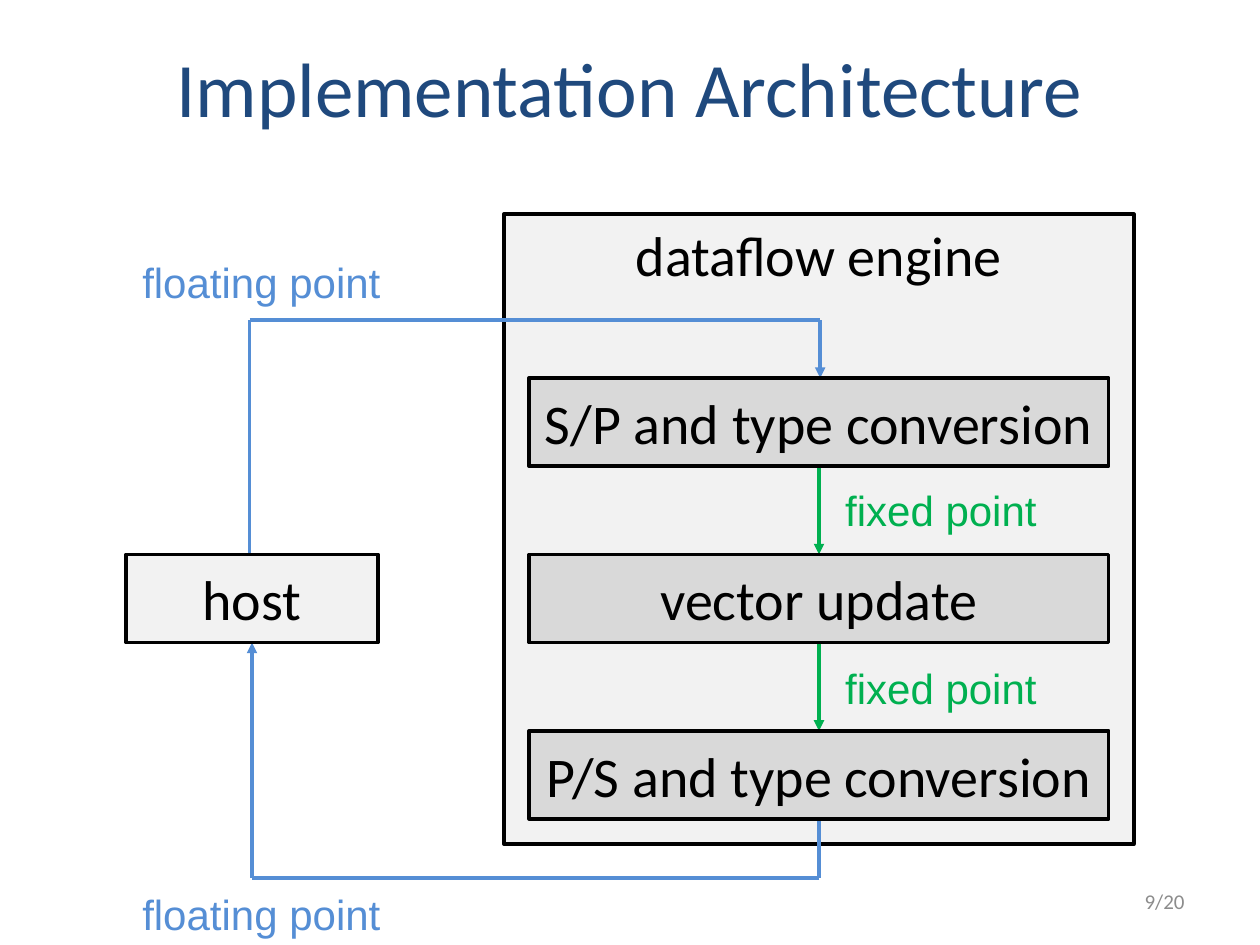
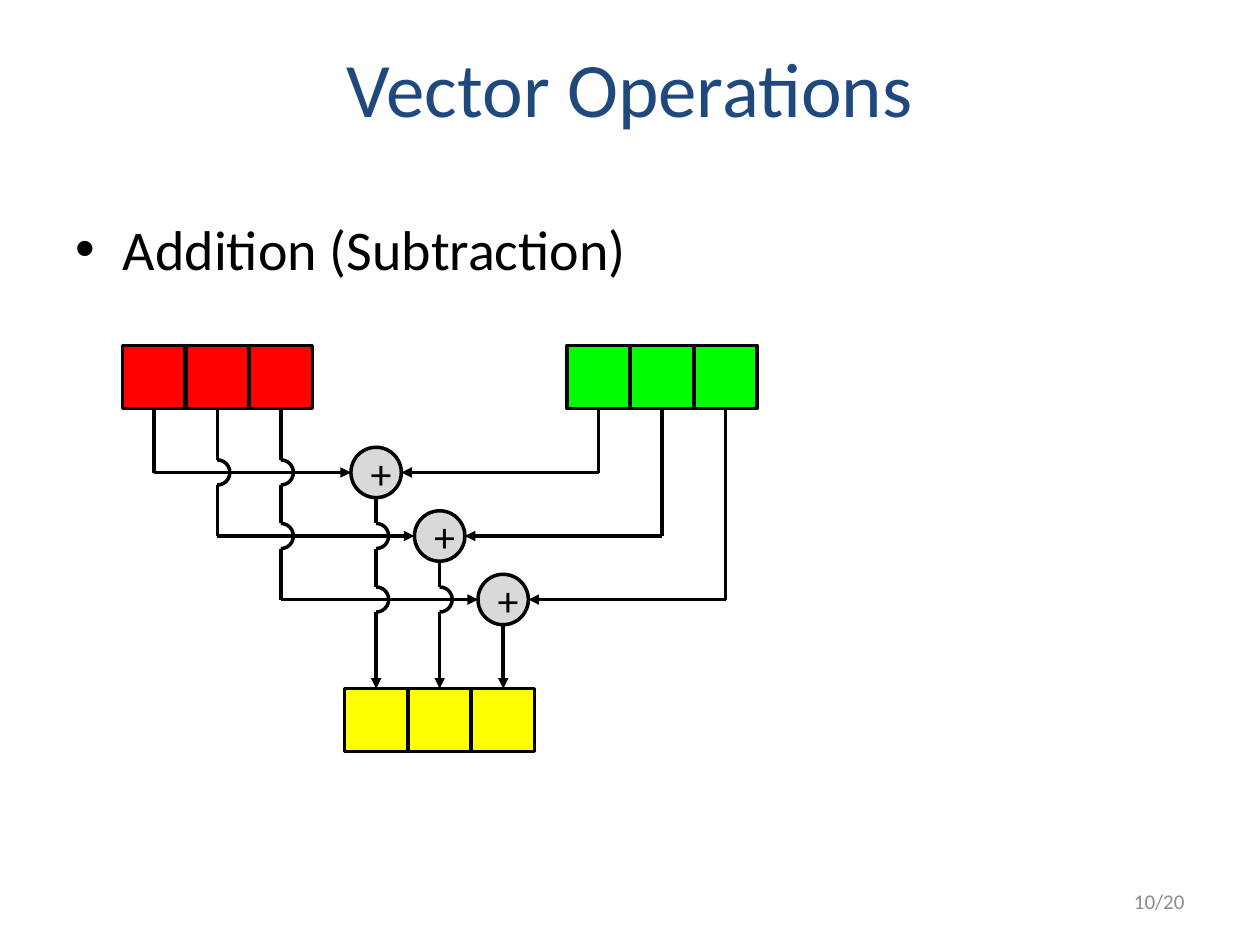
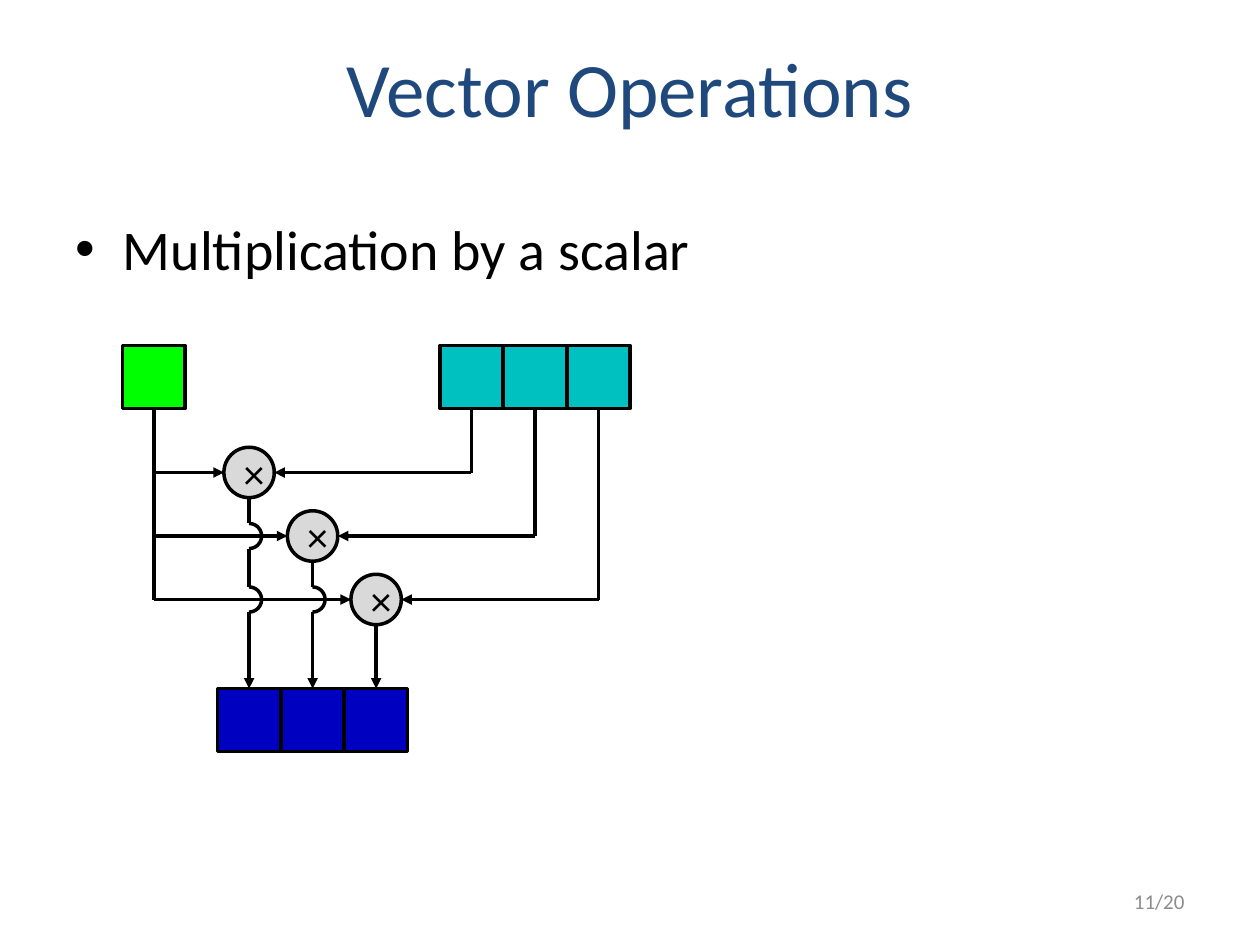
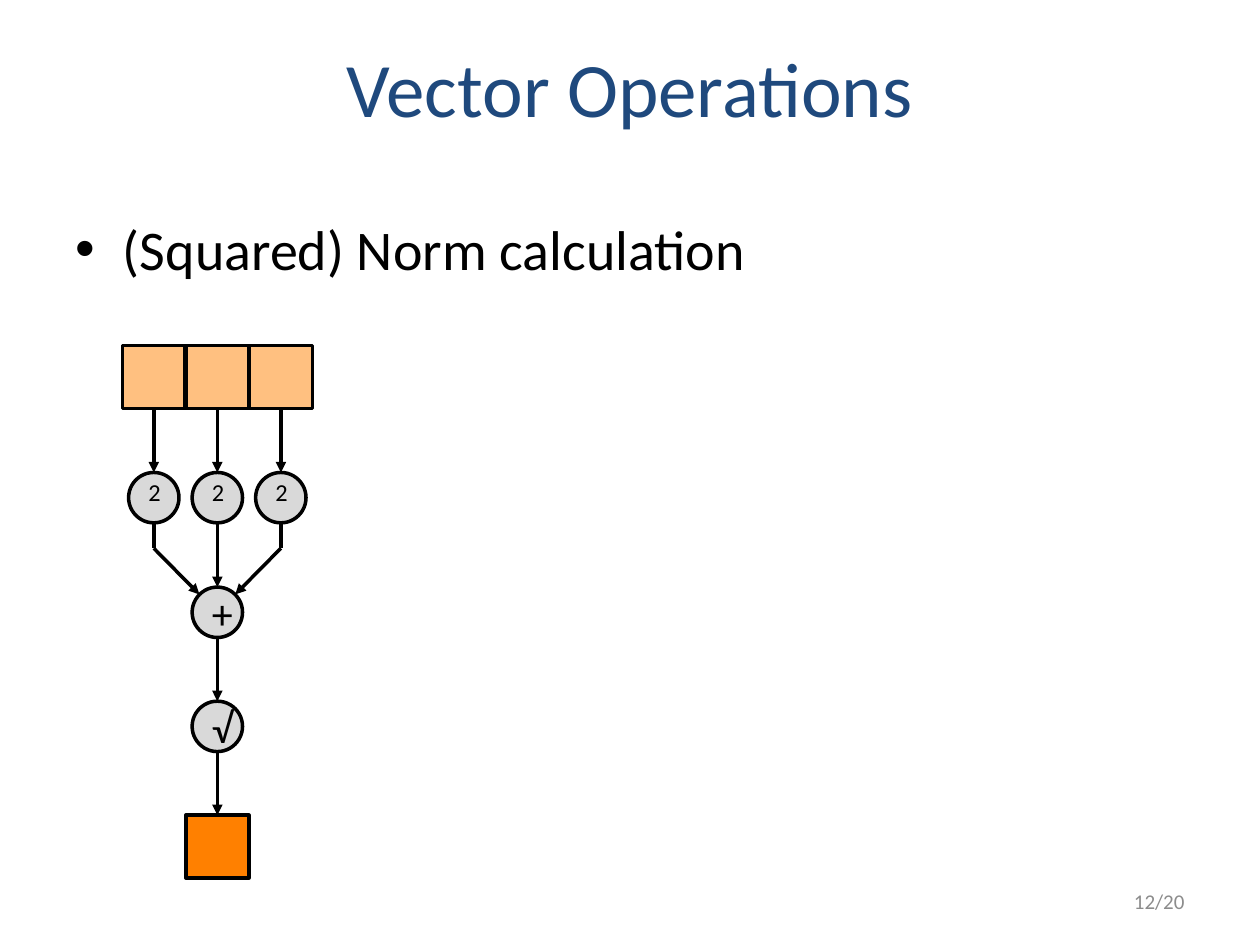
from dataclasses import dataclass
from typing import Optional

from lxml import etree
from pptx import Presentation
from pptx import util as u
from pptx.dml import color as c
from pptx.enum import shapes, text
from pptx.oxml import ns


# Theme: colours, fonts and type sizes
@dataclass(frozen=True)
class Theme:
    title: str = "1F497D"
    ink: str = "000000"
    number: str = "8C8C8C"
    panel: str = "F2F2F2"
    block: str = "D9D9D9"
    floating: str = "558ED5"
    fixed: str = "00B050"
    font: str = "Calibri"
    label_font: str = "Arial"
    title_size: int = 44
    body_size: int = 32
    label_size: int = 24
    number_size: int = 12
    line_width: int = 2


THEME = Theme()
LAST_NUMBER = 20


# Described elements, in points
@dataclass(frozen=True)
class Box:
    left: float
    top: float
    width: float
    height: float


@dataclass(frozen=True)
class Block:
    text: str
    box: Box
    fill: str
    anchor: text.MSO_ANCHOR = text.MSO_ANCHOR.MIDDLE


@dataclass(frozen=True)
class Label:
    text: str
    box: Box
    color: str
    align: text.PP_ALIGN
    wrap: bool


@dataclass(frozen=True)
class Vector:
    column: float
    color: str
    count: int = 3


@dataclass(frozen=True)
class LaneDiagram:
    """Two inputs joined lane by lane into a result below."""
    symbol: str
    first: Vector
    second: Vector
    result: Vector


Point = tuple[float, float]

TITLE_BOX = Box(36, 21.6, 648, 56.2)
LIST_BOX = Box(36, 118.8, 648, 46.1)
NUMBER_BOX = Box(516.2, 500.4, 167.8, 28.8)

# Grid of the vector diagrams
STEP = 36.3
CELL = 36
NODE_RADIUS = 14.4
HOP_RADIUS = 7.2
CELLS_TOP = 197.5
CELLS_BOTTOM = CELLS_TOP + CELL
RESULT_TOP = 393.5
LEVELS = [270 + STEP * lane for lane in range(3)]


def column_x(column: float) -> float:
    return 87.9 + STEP * column


# Drawing helpers
def rgb(value: str) -> c.RGBColor:
    return c.RGBColor.from_string(value)


def place(shape, box: Box) -> None:
    shape.left, shape.top = u.Pt(box.left), u.Pt(box.top)
    shape.width, shape.height = u.Pt(box.width), u.Pt(box.height)


def write(shape, words: str, size: int, color: str = THEME.ink, font: str = THEME.font,
          align: Optional[text.PP_ALIGN] = text.PP_ALIGN.CENTER,
          anchor: Optional[text.MSO_ANCHOR] = text.MSO_ANCHOR.MIDDLE) -> None:
    frame = shape.text_frame
    frame.text = words
    frame.vertical_anchor = anchor
    para = frame.paragraphs[0]
    para.alignment = align
    para.font.name = font
    para.font.size = u.Pt(size)
    para.font.color.rgb = rgb(color)


def add_text_box(page, box: Box):
    return page.shapes.add_textbox(u.Pt(box.left), u.Pt(box.top), u.Pt(box.width), u.Pt(box.height))


def add_outlined(page, kind: shapes.MSO_SHAPE, box: Box, fill: Optional[str]):
    shape = page.shapes.add_shape(kind, u.Pt(box.left), u.Pt(box.top),
                                  u.Pt(box.width), u.Pt(box.height))
    shape.shadow.inherit = False
    if fill:
        shape.fill.solid()
        shape.fill.fore_color.rgb = rgb(fill)
    else:
        shape.fill.background()
    shape.line.color.rgb = rgb(THEME.ink)
    shape.line.width = u.Pt(THEME.line_width)
    return shape


def add_block(page, block: Block) -> None:
    shape = add_outlined(page, shapes.MSO_SHAPE.RECTANGLE, block.box, block.fill)
    write(shape, block.text, THEME.body_size, anchor=block.anchor)


def add_label(page, label: Label) -> None:
    shape = add_text_box(page, label.box)
    write(shape, label.text, THEME.label_size, label.color, THEME.label_font,
          label.align, text.MSO_ANCHOR.TOP)
    shape.text_frame.word_wrap = label.wrap
    shape.text_frame.auto_size = text.MSO_AUTO_SIZE.SHAPE_TO_FIT_TEXT


def add_route(page, points: list[Point], color: str = THEME.ink, arrow: bool = True) -> None:
    """Straight lines through the points; the arrowhead sits at the last one."""
    for index, (start, end) in enumerate(zip(points, points[1:])):
        line = page.shapes.add_connector(shapes.MSO_CONNECTOR.STRAIGHT,
                                         *(u.Pt(value) for value in start + end))
        line.line.color.rgb = rgb(color)
        line.line.width = u.Pt(THEME.line_width)
        properties = line.element.spPr
        if arrow and index == len(points) - 2:
            etree.SubElement(properties.find(ns.qn("a:ln")), ns.qn("a:tailEnd"), type="triangle")
        etree.SubElement(properties, ns.qn("a:effectLst"))


def add_drop(page, x: float, top: float, bottom: float, hops: list[float],
             arrow: bool = False) -> None:
    """Vertical wire that hops over the wires crossing it."""
    for hop in hops:
        add_route(page, [(x, top), (x, hop - HOP_RADIUS)], arrow=False)
        arc = add_outlined(page, shapes.MSO_SHAPE.ARC,
                           Box(x - HOP_RADIUS, hop - HOP_RADIUS, 2 * HOP_RADIUS, 2 * HOP_RADIUS),
                           None)
        arc.adjustments[0], arc.adjustments[1] = 162, 54.05
        top = hop + HOP_RADIUS
    add_route(page, [(x, top), (x, bottom)], arrow=arrow)


def add_cells(page, vector: Vector, top: float) -> None:
    for index in range(vector.count):
        left = column_x(vector.column + index) - CELL / 2
        add_outlined(page, shapes.MSO_SHAPE.RECTANGLE, Box(left, top, CELL, CELL), vector.color)


def add_node(page, x: float, y: float, symbol: str, raised: bool = False) -> None:
    box = Box(x - NODE_RADIUS, y - NODE_RADIUS, 2 * NODE_RADIUS, 2 * NODE_RADIUS)
    node = add_outlined(page, shapes.MSO_SHAPE.OVAL, box, THEME.block)
    write(node, symbol, THEME.label_size)
    if raised:
        for span in node.element.iter(ns.qn("a:r")):
            span.get_or_add_rPr().set("baseline", "30000")


# Page frame: title, optional bullet and page number
def add_page(deck, number: int, title: str, bullet: Optional[str] = None):
    page = deck.slides.add_slide(deck.slide_layouts[1 if bullet else 5])
    place(page.shapes.title, TITLE_BOX)
    write(page.shapes.title, title, THEME.title_size, THEME.title)
    if bullet:
        body = page.placeholders[1]
        place(body, LIST_BOX)
        write(body, bullet, THEME.body_size, align=None, anchor=None)
        body.text_frame.auto_size = text.MSO_AUTO_SIZE.SHAPE_TO_FIT_TEXT
    footer = add_text_box(page, NUMBER_BOX)
    footer.text_frame.word_wrap = True
    write(footer, f"{number}/{LAST_NUMBER}", THEME.number_size, THEME.number,
          align=text.PP_ALIGN.RIGHT)
    return page


# Architecture: host and dataflow engine
def draw_architecture(page) -> None:
    add_block(page, Block("dataflow engine", Box(288, 122.4, 360, 360), THEME.panel,
                          text.MSO_ANCHOR.TOP))

    height, pitch, first_top, middle = 50.4, 100.8, 216, 468
    tops = [first_top + pitch * index for index in range(3)]
    host = Box(72, tops[1], 144, height)

    add_route(page, [(142.6, host.top), (142.6, 182.9), (468.7, 182.9), (468.7, first_top)],
              THEME.floating)
    add_route(page, [(middle, tops[2] + height), (middle, 501.8), (144, 501.8),
                     (144, host.top + height)], THEME.floating)
    for top, next_top, label_top in zip(tops, tops[1:], (273.6, 375.1)):
        add_route(page, [(middle, top + height), (middle, next_top)], THEME.fixed)
        add_label(page, Label("fixed point", Box(475.9, label_top, 125.3, 36), THEME.fixed,
                              text.PP_ALIGN.LEFT, False))
    for label_top in (143.3, 504):
        add_label(page, Label("floating point", Box(73.4, label_top, 151.9, 36), THEME.floating,
                              text.PP_ALIGN.CENTER, True))

    add_block(page, Block("host", host, THEME.panel))
    stages = ("S/P and type conversion", "vector update", "P/S and type conversion")
    for stage, top in zip(stages, tops):
        add_block(page, Block(stage, Box(302.4, top, 331.2, height), THEME.block))


# Lane by lane operations
def draw_lanes(page, diagram: LaneDiagram) -> None:
    add_cells(page, diagram.first, CELLS_TOP)
    add_cells(page, diagram.second, CELLS_TOP)
    add_cells(page, diagram.result, RESULT_TOP)

    scalar = diagram.first.count == 1
    for source in range(diagram.first.count):
        bottom = LEVELS[-1] if scalar else LEVELS[source]
        add_drop(page, column_x(diagram.first.column + source), CELLS_BOTTOM, bottom,
                 LEVELS[:source])

    for lane, level in enumerate(LEVELS):
        node_x = column_x(diagram.result.column + lane)
        first_x = column_x(diagram.first.column + (0 if scalar else lane))
        second_x = column_x(diagram.second.column + lane)
        add_node(page, node_x, level, diagram.symbol)
        add_route(page, [(first_x, level), (node_x - NODE_RADIUS, level)])
        add_route(page, [(second_x, CELLS_BOTTOM), (second_x, level),
                         (node_x + NODE_RADIUS, level)])
        add_drop(page, node_x, level + NODE_RADIUS, RESULT_TOP, LEVELS[lane + 1:], arrow=True)


# Norm: squares, sum and root
def draw_norm(page) -> None:
    add_cells(page, Vector(0, "FFC080"), CELLS_TOP)
    square_y, sum_y, root_y, result_top = 284.4, 349.9, 415.1, 465.8
    bend_y = 313.3
    middle = column_x(1)
    reach = NODE_RADIUS * 0.71

    for column in range(3):
        x = column_x(column)
        add_node(page, x, square_y, "2", raised=True)
        add_route(page, [(x, CELLS_BOTTOM), (x, square_y - NODE_RADIUS)])
        below = (x, square_y + NODE_RADIUS)
        if column == 1:
            add_route(page, [below, (x, sum_y - NODE_RADIUS)])
        else:
            end_x = middle + (column - 1) * reach
            add_route(page, [below, (x, bend_y), (end_x, sum_y - reach)])

    add_node(page, middle, sum_y, "+")
    add_route(page, [(middle, sum_y + NODE_RADIUS), (middle, root_y - NODE_RADIUS)])
    add_node(page, middle, root_y, "√")
    add_route(page, [(middle, root_y + NODE_RADIUS), (middle, result_top)])
    add_cells(page, Vector(1, "FF8000", 1), result_top)


def main() -> None:
    deck = Presentation()
    deck.slide_width, deck.slide_height = u.Pt(720), u.Pt(540)

    draw_architecture(add_page(deck, 9, "Implementation Architecture"))

    operations = "Vector Operations"
    draw_lanes(add_page(deck, 10, operations, "Addition (Subtraction)"),
               LaneDiagram("+", Vector(0, "FF0000"), Vector(7, "00FF00"), Vector(3.5, "FFFF00")))
    draw_lanes(add_page(deck, 11, operations, "Multiplication by a scalar"),
               LaneDiagram("×", Vector(0, "00FF00", 1), Vector(5, "00C0C0"),
                           Vector(1.5, "0000C0")))
    draw_norm(add_page(deck, 12, operations, "(Squared) Norm calculation"))

    deck.save("out.pptx")


if __name__ == "__main__":
    main()
